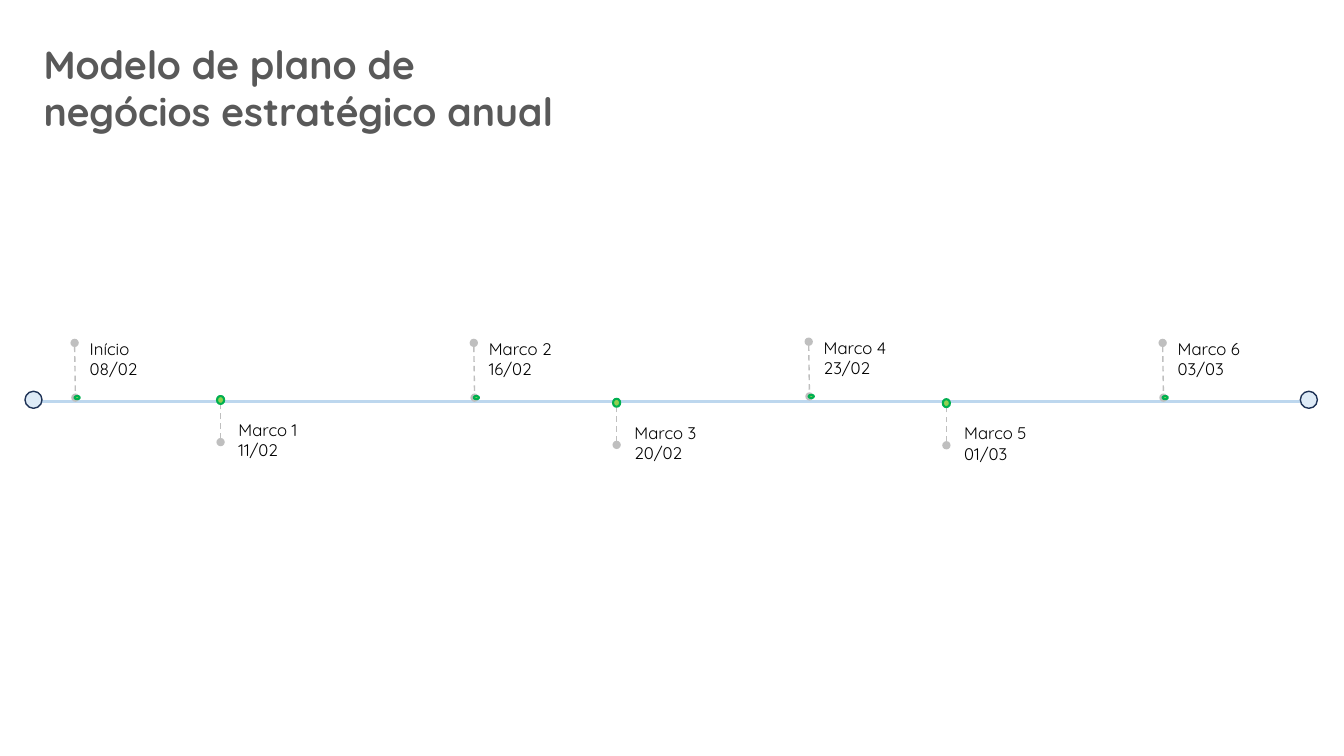
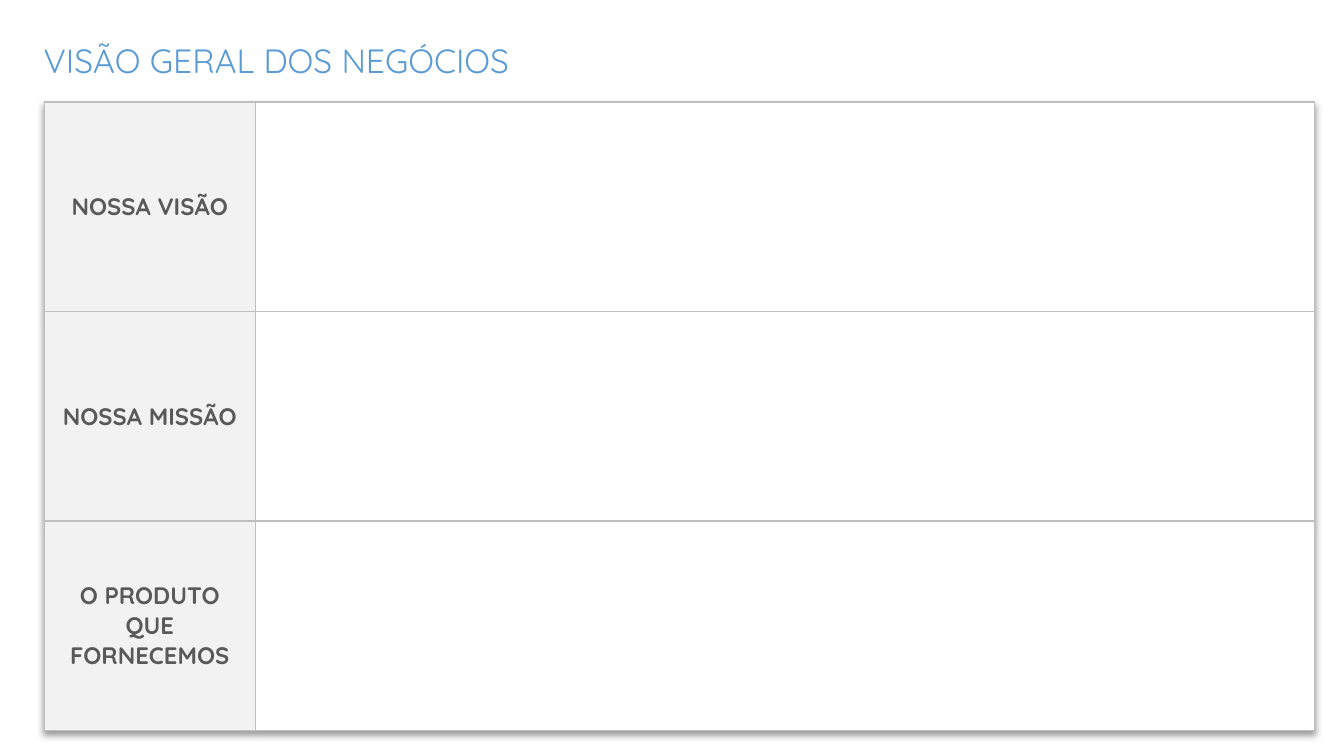
from lxml.etree import SubElement
from pptx import Presentation
from pptx.dml.color import RGBColor
from pptx.enum.dml import MSO_LINE
from pptx.enum.shapes import MSO_CONNECTOR, MSO_SHAPE
from pptx.enum.text import MSO_ANCHOR, PP_ALIGN
from pptx.oxml import parse_xml
from pptx.oxml.ns import nsdecls, qn
from pptx.util import Cm, Pt

FONT = "Quicksand"
GRAY, BLUE, BLACK, WHITE = "595959", "5B9BD5", "000000", "FFFFFF"
AXIS, STEM, LABEL_FILL = "BDD7EE", "BFBFBF", "F2F2F2"
DOT_FILL, DOT_LINE = "92D050", "00B050"
END_FILL, END_LINE = "DEEBF7", "1E3256"

AXIS_Y = 10.06
MILESTONES_ABOVE = [
    ("Início\n08/02", 1.88, 0),
    ("Marco 2\n16/02", 11.94, 0),
    ("Marco 4\n23/02", 20.38, -0.03),
    ("Marco 6\n03/03", 29.3, 0),
]
MILESTONES_BELOW = [
    ("Marco 1\n11/02", 5.56, 0),
    ("Marco 3\n20/02", 15.54, 0.07),
    ("Marco 5\n01/03", 23.85, 0.08),
]
OVERVIEW = ["NOSSA VISÃO", "NOSSA MISSÃO", "O PRODUTO QUE FORNECEMOS"]


def rgb(value):
    return RGBColor.from_string(value)


class Deck:
    """Holds the shared style and draws elements on the current slide, in centimetres."""

    def __init__(self):
        self.prs = Presentation()
        self.prs.slide_width, self.prs.slide_height = Cm(33.87), Cm(19.05)
        self.slide = None

    def new_slide(self):
        self.slide = self.prs.slides.add_slide(self.prs.slide_layouts[6])

    def style(self, tf, size, color, bold=False, align=PP_ALIGN.LEFT):
        for p in tf.paragraphs:
            p.alignment = align
            for r in p.runs:
                r.font.name, r.font.size, r.font.bold = FONT, Pt(size), bold
                r.font.color.rgb = rgb(color)

    def text(self, text, x, y, w, h, size, color, bold=False):
        tf = self.slide.shapes.add_textbox(Cm(x), Cm(y), Cm(w), Cm(h)).text_frame
        tf.word_wrap = True
        tf.text = text
        self.style(tf, size, color, bold)

    def title(self, text, h, size, color, bold=False):
        self.text(text, 0.85, 0.89, 20.52, h, size, color, bold)

    def line(self, x1, y1, x2, y2, color, width, dashed_ovals=False):
        sp = self.slide.shapes.add_connector(
            MSO_CONNECTOR.STRAIGHT, Cm(x1), Cm(y1), Cm(x2), Cm(y2))
        sp.line.color.rgb = rgb(color)
        sp.line.width = Pt(width)
        if dashed_ovals:
            sp.line.dash_style = MSO_LINE.DASH
            ln = sp.line._get_or_add_ln()
            for end in ("a:headEnd", "a:tailEnd"):
                SubElement(ln, qn(end), type="oval")
        SubElement(sp._element.spPr, qn("a:effectLst"))

    def ellipse(self, x, y, w, h, fill, line, width):
        sp = self.slide.shapes.add_shape(MSO_SHAPE.OVAL, Cm(x), Cm(y), Cm(w), Cm(h))
        sp.shadow.inherit = False
        sp.fill.solid()
        sp.fill.fore_color.rgb = rgb(fill)
        sp.line.color.rgb = rgb(line)
        sp.line.width = Pt(width)

    def milestone_above(self, label, x, dy):
        y = AXIS_Y + dy
        self.text(label, x + 0.13, y - 1.65, 2.87, 1.57, 12, BLACK)
        self.line(x, y - 1.42, x + 0.02, y - 0.04, STEM, 1, True)
        self.ellipse(x, y - 0.08, 0.13, 0.08, DOT_FILL, DOT_LINE, 1.5)

    def milestone_below(self, label, x, dy):
        y = AXIS_Y + dy
        self.text(label, x + 0.2, y + 0.4, 2.82, 1.27, 12, BLACK)
        self.line(x, y + 1.08, x, y, STEM, 1, True)
        self.ellipse(x - 0.09, y - 0.08, 0.18, 0.2, DOT_FILL, DOT_LINE, 1.5)

    def cell(self, cell, text, fill):
        tcPr = cell._tc.get_or_add_tcPr()
        for side in "LRTB":
            ln = SubElement(tcPr, qn(f"a:ln{side}"), w=str(Pt(1)))
            SubElement(SubElement(ln, qn("a:solidFill")), qn("a:srgbClr"), val=STEM)
        cell.fill.solid()
        cell.fill.fore_color.rgb = rgb(fill)
        cell.vertical_anchor = MSO_ANCHOR.MIDDLE
        cell.text_frame.text = text
        self.style(cell.text_frame, 17, GRAY, True, PP_ALIGN.CENTER)

    def table(self, labels, x, y, col_widths, row_height):
        table = self.slide.shapes.add_table(
            len(labels), len(col_widths), Cm(x), Cm(y),
            Cm(sum(col_widths)), Cm(row_height * len(labels))).table
        table.first_row = table.horz_banding = False
        table._tbl.tblPr.insert(0, parse_xml(
            f'<a:effectLst {nsdecls("a")}>'
            '<a:outerShdw blurRad="50800" dist="38100" dir="5400000" algn="t" rotWithShape="0">'
            '<a:srgbClr val="000000"><a:alpha val="40000"/></a:srgbClr>'
            '</a:outerShdw></a:effectLst>'))
        for col, width in zip(table.columns, col_widths):
            col.width = Cm(width)
        for row, label in zip(table.rows, labels):
            row.height = Cm(row_height)
            self.cell(row.cells[0], label, LABEL_FILL)
            self.cell(row.cells[1], "", WHITE)


def timeline_slide(deck):
    deck.new_slide()
    deck.title("Modelo de plano de\vnegócios estratégico anual", 2.64, 28, GRAY, True)
    deck.line(0.85, AXIS_Y + 0.05, 33.07, AXIS_Y + 0.05, AXIS, 2.25)
    for milestone in MILESTONES_ABOVE:
        deck.milestone_above(*milestone)
    for milestone in MILESTONES_BELOW:
        deck.milestone_below(*milestone)
    for x in (0.63, 32.77):
        deck.ellipse(x, 9.86, 0.43, 0.43, END_FILL, END_LINE, 1)


def overview_slide(deck):
    deck.new_slide()
    deck.title("VISÃO GERAL DOS NEGÓCIOS", 1.27, 24, BLUE)
    deck.table(OVERVIEW, 1.12, 2.57, (5.31, 26.7), 5.28)


def main():
    deck = Deck()
    timeline_slide(deck)
    overview_slide(deck)
    deck.prs.save("out.pptx")


if __name__ == "__main__":
    main()
